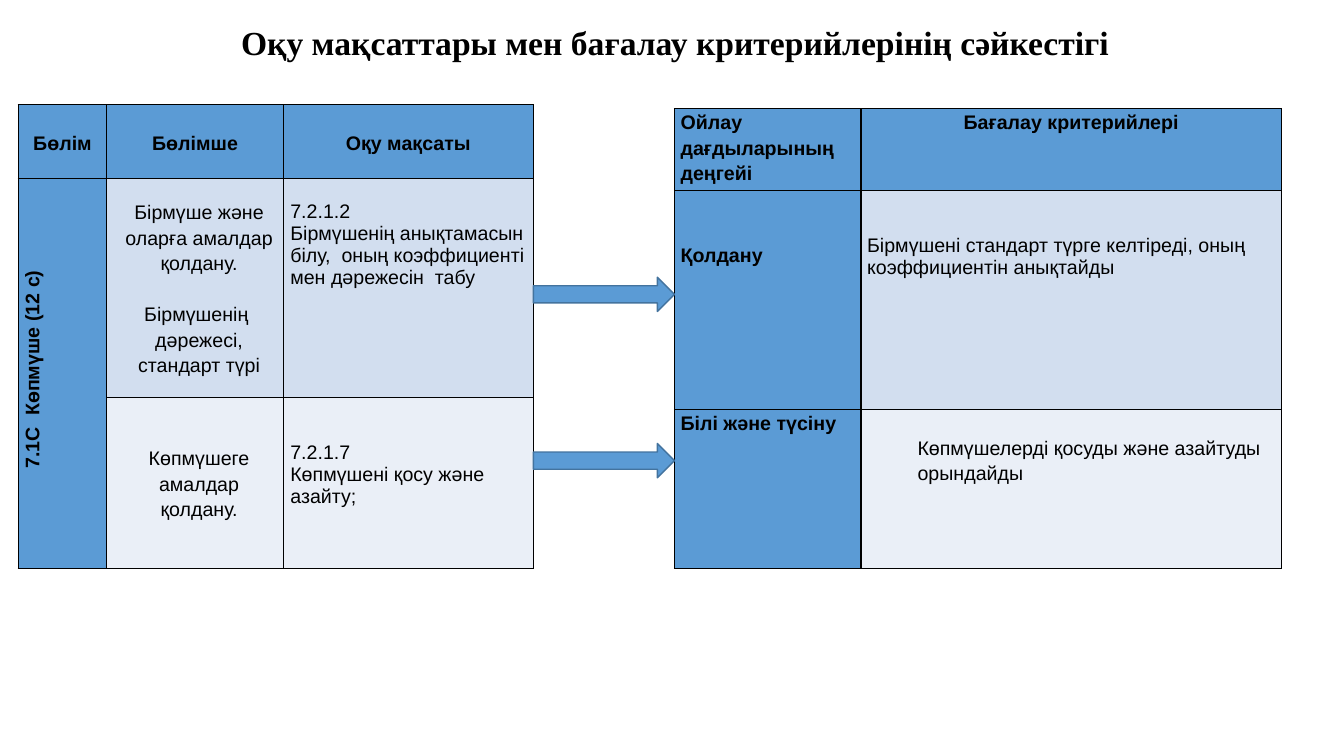
from lxml import etree
from pptx import Presentation
from pptx.dml.color import RGBColor
from pptx.enum import shapes, text
from pptx.oxml.ns import qn
from pptx.util import Inches, Pt

BLACK = RGBColor(0x00, 0x00, 0x00)
BLUE = RGBColor(0x5B, 0x9B, 0xD5)
DARK_BLUE = RGBColor(0x43, 0x73, 0x9E)
BAND_DARK = RGBColor(0xD2, 0xDE, 0xEF)
BAND_LIGHT = RGBColor(0xEA, 0xEF, 0xF7)
LEFT, CENTER = text.PP_ALIGN.LEFT, text.PP_ALIGN.CENTER
TOP, MIDDLE = text.MSO_ANCHOR.TOP, text.MSO_ANCHOR.MIDDLE


def fill_cell(cell, paragraphs, fill, side, bold=False, align=LEFT, anchor=TOP,
              top=0, indent=0, spacing=1.15, gap=0, vertical=False):
    """Write the paragraphs of a cell and set its borders, fill and margins."""
    properties = cell._tc.get_or_add_tcPr()
    for edge in ("a:lnL", "a:lnR", "a:lnT", "a:lnB"):
        line = etree.SubElement(properties, qn(edge), w=str(Pt(1)))
        solid = etree.SubElement(line, qn("a:solidFill"))
        etree.SubElement(solid, qn("a:srgbClr"), val=str(BLACK))
    if vertical:
        properties.set("vert", "vert270")
    cell.fill.solid()
    cell.fill.fore_color.rgb = fill
    cell.margin_left = cell.margin_right = Inches(side)
    cell.margin_top, cell.margin_bottom = Inches(top), 0
    cell.vertical_anchor = anchor
    for index, content in enumerate(paragraphs):
        frame = cell.text_frame
        paragraph = frame.add_paragraph() if index else frame.paragraphs[0]
        paragraph.alignment = align
        paragraph.line_spacing = spacing
        if index and gap:
            paragraph.space_before = Pt(gap)
        if indent:
            paragraph._p.get_or_add_pPr().set("marL", str(Inches(indent)))
            paragraph._p.get_or_add_pPr().set("indent", "0")
        run = paragraph.add_run()
        run.text = content
        run.font.name = "Arial"
        run.font.size = Pt(14)
        run.font.bold = bold
        run.font.color.rgb = BLACK


def add_grid(slide, left, top, columns, rows, side, cells):
    """Add a table; each cell is (paragraphs, fill, options)."""
    table = slide.shapes.add_table(
        len(rows), len(columns), Inches(left), Inches(top),
        Inches(sum(columns)), Inches(sum(rows))).table
    table.first_row = table.horz_banding = False
    for column, width in zip(table.columns, columns):
        column.width = Inches(width)
    for row, height in zip(table.rows, rows):
        row.height = Inches(height)
    for row_index, row_cells in enumerate(cells):
        for column_index, (paragraphs, fill, options) in enumerate(row_cells):
            fill_cell(table.cell(row_index, column_index), paragraphs, fill,
                      side, **options)
    return table


presentation = Presentation()
presentation.slide_width = Inches(13.33)
presentation.slide_height = Inches(7.5)
slide = presentation.slides.add_slide(presentation.slide_layouts[5])

# Title
title = slide.shapes.title
title.left, title.top = Inches(0.15), Inches(0.22)
title.width, title.height = Inches(13.09), Inches(0.45)
title.text_frame.vertical_anchor = MIDDLE
paragraph = title.text_frame.paragraphs[0]
paragraph.alignment = CENTER
paragraph.line_spacing = 0.9
run = paragraph.add_run()
run.text = "Оқу мақсаттары мен бағалау критерийлерінің сәйкестігі"
run.font.name = "Times New Roman"
run.font.size = Pt(24)
run.font.bold = True
run.font.color.rgb = BLACK

# Learning objectives
header = dict(bold=True, align=CENTER, anchor=MIDDLE)
topic = dict(align=CENTER, anchor=MIDDLE, indent=0.08)
objectives = add_grid(
    slide, 0.18, 1.04, [0.88, 1.75, 2.48], [0.73, 2.17, 1.7], 0.07, [
        [([name], BLUE, header) for name in ("Бөлім", "Бөлімше", "Оқу мақсаты")],
        [(["7.1С  Көпмүше (12 с)"], BLUE, dict(topic, bold=True, vertical=True)),
         (["Бірмүше және оларға амалдар қолдану.",
           "Бірмүшенің  дәрежесі, стандарт түрі"], BAND_DARK, dict(topic, gap=18.5)),
         (["7.2.1.2", "Бірмүшенің анықтамасын білу,  оның коэффициенті "
           "мен дәрежесін  табу"], BAND_DARK, dict(top=0.22, spacing=1.0))],
        [([], BLUE, {}),
         (["Көпмүшеге амалдар қолдану."], BAND_LIGHT, topic),
         (["7.2.1.7", "Көпмүшені қосу және азайту;"], BAND_LIGHT,
          dict(top=0.44, spacing=1.0))],
    ])
objectives.cell(1, 0).merge(objectives.cell(2, 0))

# Assessment criteria
add_grid(
    slide, 6.69, 1.08, [1.85, 4.17], [0.81, 2.17, 1.58], 0.06, [
        [(["Ойлау дағдыларының деңгейі"], BLUE, dict(bold=True)),
         (["Бағалау критерийлері"], BLUE, dict(bold=True, align=CENTER))],
        [(["Қолдану"], BLUE, dict(bold=True, top=0.5)),
         (["Бірмүшені стандарт түрге келтіреді, оның коэффициентін анықтайды"],
          BAND_DARK, dict(top=0.44, spacing=1.0))],
        [(["Білі және түсіну"], BLUE, dict(bold=True)),
         (["Көпмүшелерді қосуды және азайтуды орындайды"], BAND_LIGHT,
          dict(top=0.25, indent=0.5))],
    ])

# Arrows from objectives to criteria
for arrow_top in (2.75, 4.4):
    arrow = slide.shapes.add_shape(
        shapes.MSO_SHAPE.RIGHT_ARROW, Inches(5.29), Inches(arrow_top),
        Inches(1.4), Inches(0.34))
    arrow.shadow.inherit = False
    arrow.fill.solid()
    arrow.fill.fore_color.rgb = BLUE
    arrow.line.color.rgb = DARK_BLUE
    arrow.line.width = Pt(1)

presentation.save("out.pptx")
